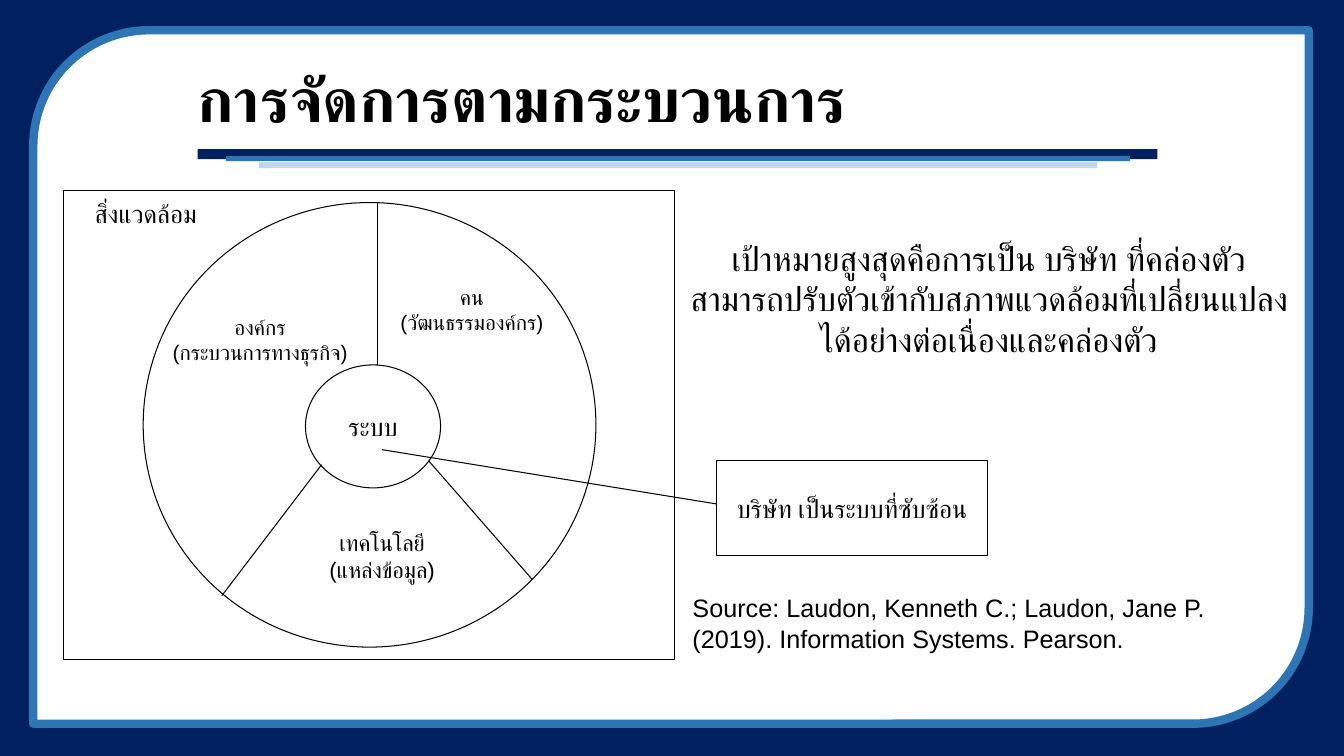
"""Build the slide on process-based management with its system wheel diagram."""
from dataclasses import dataclass
from typing import Optional

from lxml import etree
from pptx import Presentation
from pptx.dml.color import RGBColor
from pptx.enum.shapes import MSO_CONNECTOR, MSO_SHAPE
from pptx.enum.text import MSO_ANCHOR, PP_ALIGN
from pptx.oxml.ns import qn
from pptx.shapes.autoshape import Shape
from pptx.slide import Slide
from pptx.util import Inches, Pt

NAVY = RGBColor(0x00, 0x20, 0x60)
BLUE = RGBColor(0x2E, 0x75, 0xB6)
PALE_BLUE = RGBColor(0xBD, 0xD7, 0xEE)
WHITE = RGBColor(0xFF, 0xFF, 0xFF)
BLACK = RGBColor(0x00, 0x00, 0x00)

RECTANGLE = MSO_SHAPE.RECTANGLE
OVAL = MSO_SHAPE.OVAL
FRAME = MSO_SHAPE.ROUND_2_DIAG_RECTANGLE
CALLOUT = MSO_SHAPE.LINE_CALLOUT_1
STRAIGHT = MSO_CONNECTOR.STRAIGHT
LEFT = PP_ALIGN.LEFT
CENTER = PP_ALIGN.CENTER
TOP = MSO_ANCHOR.TOP
MIDDLE = MSO_ANCHOR.MIDDLE

Box = tuple[float, float, float, float]
Point = tuple[float, float]
DEFAULT_INSETS: Box = (0.1, 0.05, 0.1, 0.05)


@dataclass(frozen=True)
class Words:
    lines: tuple[str, ...]
    size: float
    align: PP_ALIGN = CENTER
    anchor: MSO_ANCHOR = TOP
    insets: Box = DEFAULT_INSETS
    bold: bool = False
    wrap: bool = True
    font: str = "Arial"


@dataclass(frozen=True)
class Figure:
    kind: MSO_SHAPE
    box: Box
    fill: RGBColor = WHITE
    line: Optional[RGBColor] = BLACK
    weight: float = 0.75
    adjustments: tuple[float, ...] = ()
    words: Optional[Words] = None


@dataclass(frozen=True)
class Label:
    box: Box
    words: Words


@dataclass(frozen=True)
class Divider:
    start: Point
    end: Point


FIGURES = (
    Figure(FRAME, (0.33, 0.3, 12.65, 6.88), line=BLUE, weight=6, adjustments=(0.167, 0)),
    Figure(RECTANGLE, (1.96, 1.48, 9.52, 0.1), NAVY, None),
    Figure(RECTANGLE, (2.24, 1.55, 8.97, 0.05), BLUE, None),
    Figure(RECTANGLE, (2.57, 1.61, 8.31, 0.06), PALE_BLUE, None),
    Figure(RECTANGLE, (0.63, 1.89, 6.06, 4.65), weight=0.5,
           words=Words(("สิ่งแวดล้อม",), 18, LEFT, insets=(0.31, 0.08, 0.1, 0.05), font="Roboto")),
    Figure(OVAL, (1.42, 2.01, 4.49, 4.41)),
    Figure(OVAL, (3.03, 3.62, 1.34, 1.22),
           words=Words(("ระบบ",), 18, anchor=MIDDLE, wrap=False)),
    Figure(CALLOUT, (7.11, 4.57, 2.68, 0.94), adjustments=(0.457, -0.002, -0.116, -1.24),
           words=Words(("บริษัท เป็นระบบที่ซับซ้อน",), 18, anchor=MIDDLE, wrap=False)),
)

DIVIDERS = (
    Divider((3.74, 2.01), (3.74, 3.62)),
    Divider((3.19, 4.61), (2.2, 5.91)),
    Divider((4.25, 4.57), (5.28, 5.75)),
)

LABELS = (
    Label((1.96, 0.49, 9.52, 0.97),
          Words(("การจัดการตามกระบวนการ",), 44, LEFT, MIDDLE, (0, 0, 0, 0), bold=True)),
    Label((6.81, 1.72, 5.99, 5.28),
          Words(("เป้าหมายสูงสุดคือการเป็น บริษัท ที่คล่องตัว"
                 "สามารถปรับตัวเข้ากับสภาพแวดล้อมที่เปลี่ยนแปลง"
                 "ได้อย่างต่อเนื่องและคล่องตัว",), 24, insets=(0, 0.64, 0, 0))),
    Label((1.5, 3.07, 2.16, 0.56), Words(("องค์กร", "(กระบวนการทางธุรกิจ)"), 15)),
    Label((3.8, 2.77, 1.76, 0.79), Words(("คน", "(วัฒนธรรมองค์กร)"), 15)),
    Label((3.01, 5.2, 1.56, 0.66), Words(("เทคโนโลยี", "(แหล่งข้อมูล)"), 16)),
    Label((6.77, 5.83, 6.13, 0.66),
          Words(("Source: Laudon, Kenneth C.; Laudon, Jane P. (2019). "
                 "Information Systems. Pearson.",), 18, LEFT)),
)


def write_words(shape: Shape, words: Words) -> None:
    """Fill a shape with formatted paragraphs."""
    frame = shape.text_frame
    frame.word_wrap = words.wrap
    frame.vertical_anchor = words.anchor
    (frame.margin_left, frame.margin_top,
     frame.margin_right, frame.margin_bottom) = map(Inches, words.insets)
    for index, line in enumerate(words.lines):
        paragraph = frame.add_paragraph() if index else frame.paragraphs[0]
        paragraph.alignment = words.align
        run = paragraph.add_run()
        run.text = line
        run.font.name = words.font
        run.font.size = Pt(words.size)
        run.font.bold = words.bold
        run.font.color.rgb = BLACK


def draw_figure(slide: Slide, figure: Figure) -> None:
    """Draw one preset shape with its words."""
    shape = slide.shapes.add_shape(figure.kind, *map(Inches, figure.box))
    shape.shadow.inherit = False
    for index, value in enumerate(figure.adjustments):
        shape.adjustments[index] = value
    shape.fill.solid()
    shape.fill.fore_color.rgb = figure.fill
    if figure.line is None:
        shape.line.fill.background()
    else:
        shape.line.color.rgb = figure.line
        shape.line.width = Pt(figure.weight)
    if figure.words:
        write_words(shape, figure.words)


def draw_divider(slide: Slide, divider: Divider) -> None:
    """Draw one line between two sectors of the wheel."""
    connector = slide.shapes.add_connector(
        STRAIGHT, *map(Inches, divider.start + divider.end))
    connector.line.color.rgb = BLACK
    connector.line.width = Pt(0.75)
    etree.SubElement(connector._element.spPr, qn("a:effectLst"))


def draw_label(slide: Slide, label: Label) -> None:
    """Draw one text box."""
    write_words(slide.shapes.add_textbox(*map(Inches, label.box)), label.words)


def main() -> None:
    """Assemble and save the slide."""
    presentation = Presentation()
    presentation.slide_width = Inches(13.33)
    presentation.slide_height = Inches(7.5)
    slide = presentation.slides.add_slide(presentation.slide_layouts[6])
    slide.background.fill.solid()
    slide.background.fill.fore_color.rgb = NAVY
    for figure in FIGURES:
        draw_figure(slide, figure)
    for divider in DIVIDERS:
        draw_divider(slide, divider)
    for label in LABELS:
        draw_label(slide, label)
    presentation.save("out.pptx")


if __name__ == "__main__":
    main()
